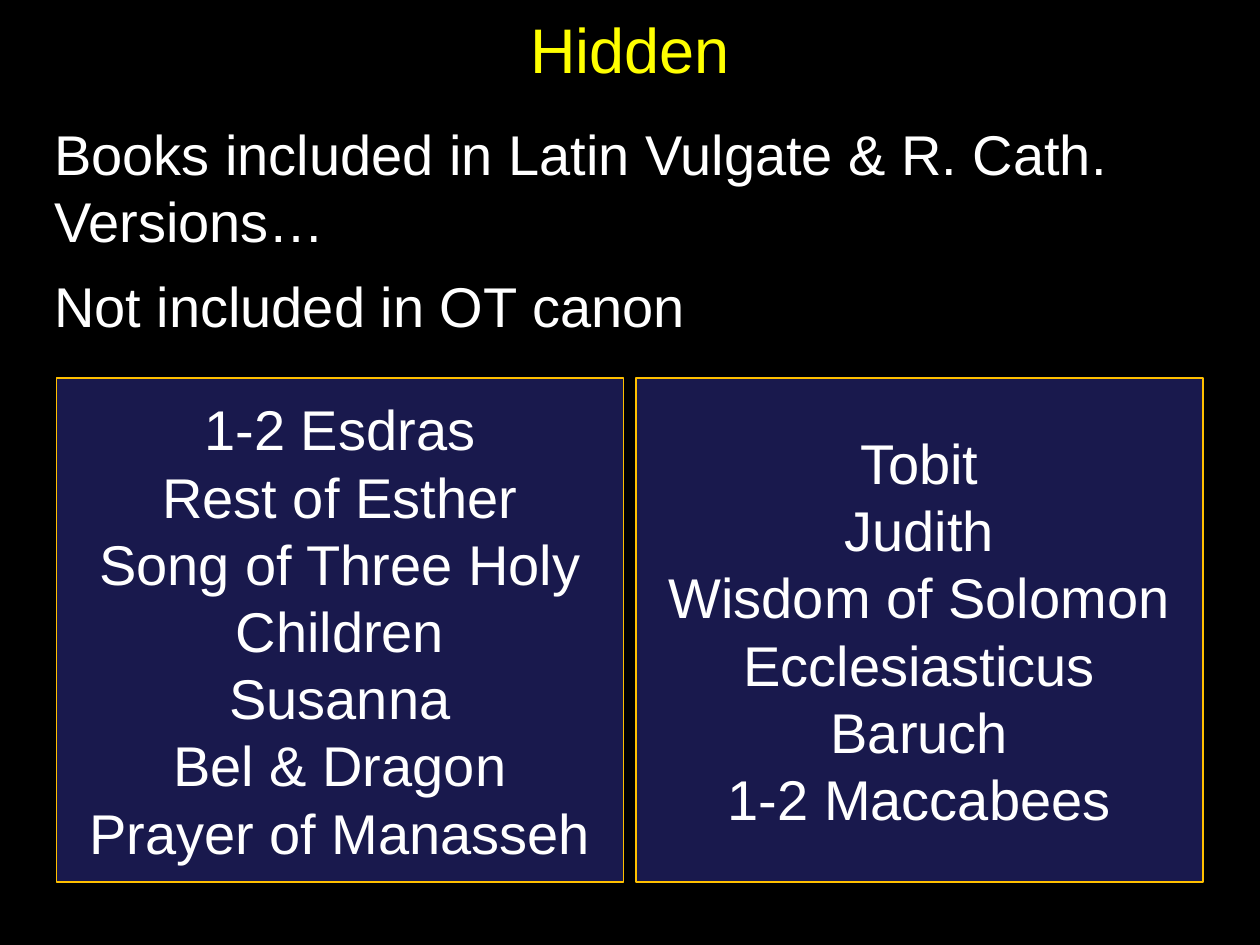
"""Build a slide listing the hidden books left out of the OT canon."""
from dataclasses import dataclass

from pptx import Presentation
from pptx.dml.color import RGBColor
from pptx.enum.shapes import MSO_SHAPE
from pptx.enum.text import MSO_ANCHOR, PP_ALIGN
from pptx.shapes.autoshape import Shape
from pptx.slide import Slide
from pptx.util import Cm, Pt

RECTANGLE = MSO_SHAPE.RECTANGLE
TOP, MIDDLE = MSO_ANCHOR.TOP, MSO_ANCHOR.MIDDLE
LEFT, CENTER = PP_ALIGN.LEFT, PP_ALIGN.CENTER

BLACK, WHITE, YELLOW = "000000", "FFFFFF", "FFFF00"
NAVY, GOLD = "19194D", "FFC000"


@dataclass(frozen=True)
class TextBlock:
    left: float
    top: float
    width: float
    height: float
    lines: tuple[str, ...]
    size: int = 32
    color: str = WHITE
    align: PP_ALIGN = CENTER
    anchor: MSO_ANCHOR = MIDDLE
    margin_top: float = 0.13
    gap: int = 0

    def bounds(self) -> tuple[Cm, Cm, Cm, Cm]:
        return Cm(self.left), Cm(self.top), Cm(self.width), Cm(self.height)


HEADING = TextBlock(1.27, 0, 22.86, 1.96, ("Hidden",), size=36, color=YELLOW)
SUMMARY = TextBlock(
    0.84, 2.16, 23.7, 14.55,
    ("Books included in Latin Vulgate & R. Cath. Versions…",
     "Not included in OT canon"),
    align=LEFT, anchor=TOP, margin_top=0.25, gap=10,
)
BOOK_LISTS = (
    ("1-2 Esdras", "Rest of Esther", "Song of Three Holy Children",
     "Susanna", "Bel & Dragon", "Prayer of Manasseh"),
    ("Tobit", "Judith", "Wisdom of Solomon", "Ecclesiasticus",
     "Baruch", "1-2 Maccabees"),
)
PANEL_LEFT, PANEL_TOP, PANEL_PITCH = 1.14, 7.62, 11.68
PANEL_WIDTH, PANEL_HEIGHT = 11.43, 10.16


def rgb(color: str) -> RGBColor:
    return RGBColor.from_string(color)


def write_lines(shape: Shape, block: TextBlock) -> None:
    frame = shape.text_frame
    frame.word_wrap = True
    frame.vertical_anchor = block.anchor
    frame.margin_top = Cm(block.margin_top)
    for index, line in enumerate(block.lines):
        paragraph = frame.add_paragraph() if index else frame.paragraphs[0]
        paragraph.text = line
        paragraph.alignment = block.align
        paragraph.space_before = Pt(block.gap if index else 0)
        paragraph.font.name = "Arial"
        paragraph.font.size = Pt(block.size)
        paragraph.font.color.rgb = rgb(block.color)


def add_text(slide: Slide, block: TextBlock) -> None:
    write_lines(slide.shapes.add_textbox(*block.bounds()), block)


def add_panel(slide: Slide, block: TextBlock) -> None:
    panel = slide.shapes.add_shape(RECTANGLE, *block.bounds())
    panel.shadow.inherit = False
    panel.fill.solid()
    panel.fill.fore_color.rgb = rgb(NAVY)
    panel.line.color.rgb = rgb(GOLD)
    panel.line.width = Pt(1)
    write_lines(panel, block)


def main() -> None:
    presentation = Presentation()
    presentation.slide_width, presentation.slide_height = Cm(25.4), Cm(19.05)
    slide = presentation.slides.add_slide(presentation.slide_layouts[6])
    slide.background.fill.solid()
    slide.background.fill.fore_color.rgb = rgb(BLACK)
    add_text(slide, HEADING)
    add_text(slide, SUMMARY)
    for column, books in enumerate(BOOK_LISTS):
        left = PANEL_LEFT + column * PANEL_PITCH
        add_panel(slide, TextBlock(left, PANEL_TOP, PANEL_WIDTH, PANEL_HEIGHT, books))
    presentation.save("out.pptx")


if __name__ == "__main__":
    main()
